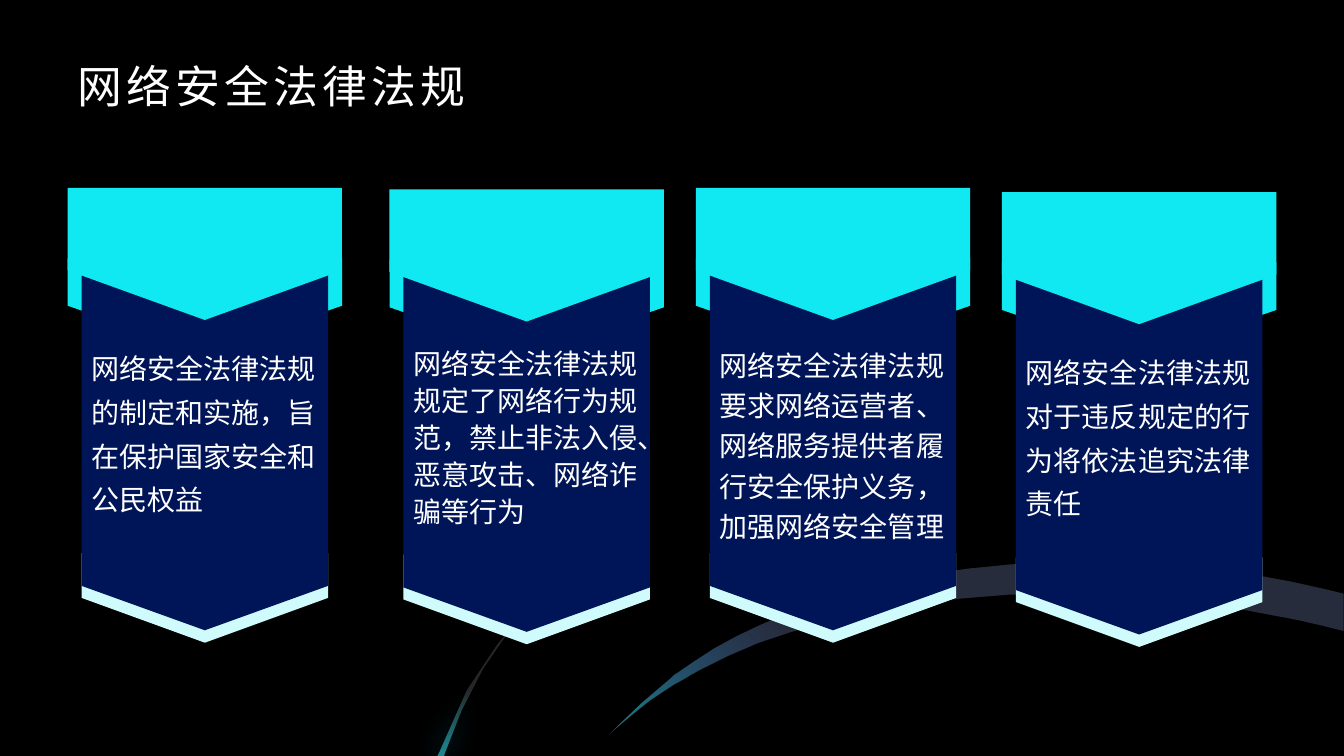
from lxml import etree
from pptx import Presentation
from pptx.dml.color import RGBColor
from pptx.enum import shapes, text
from pptx.oxml import ns
from pptx.util import Pt

CYAN, PALE, NAVY, WHITE = "10E9F2", "CFFBFC", "001558", "FFFFFF"


def paint(sp, *stops, angle=0):
    """Fill with one hex colour, or with two (position, hex, alpha) gradient stops."""
    sp.shadow.inherit = False
    sp.line.fill.background()
    if len(stops) == 1:
        sp.fill.solid()
        sp.fill.fore_color.rgb = RGBColor.from_string(stops[0])
        return
    sp.fill.gradient()
    sp.fill.gradient_angle = angle
    for stop, (position, colour, alpha) in zip(sp.fill.gradient_stops, stops):
        stop.position = position
        stop.color.rgb = RGBColor.from_string(colour)
        clr = stop._gs.find(ns.qn("a:srgbClr"))
        etree.SubElement(clr, ns.qn("a:alpha")).set("val", str(alpha * 1000))


def outline(points):
    """Add a closed shape through points given in points (1/72 inch)."""
    corners = [(Pt(x), Pt(y)) for x, y in points]
    builder = s.shapes.build_freeform(*corners[0], scale=1.0)
    builder.add_line_segments(corners[1:], close=True)
    return builder.convert_to_shape()


prs = Presentation()
prs.slide_width, prs.slide_height = Pt(960), Pt(540)
s = prs.slides.add_slide(prs.slide_layouts[6])
s.background.fill.solid()
s.background.fill.fore_color.rgb = RGBColor.from_string("000000")

# Background curves, in inches
ribbon = [
    (10.77, 5.57), (10.96, 5.57), (11.15, 5.58), (11.34, 5.59), (11.52, 5.6),
    (11.71, 5.62), (11.89, 5.63), (12.08, 5.66), (12.27, 5.68), (12.54, 5.72),
    (12.81, 5.77), (12.99, 5.81), (13.17, 5.85), (13.33, 5.89), (13.33, 6.26),
    (13.13, 6.21), (12.87, 6.15), (12.6, 6.1), (12.34, 6.05), (12.08, 6.01),
    (11.55, 5.94), (11.02, 5.91), (10.5, 5.89), (10, 5.9), (9.52, 5.94),
    (9.06, 5.99), (8.62, 6.07), (8.19, 6.17), (7.85, 6.27), (7.52, 6.38),
    (7.22, 6.51), (6.94, 6.65), (6.69, 6.79), (6.45, 6.95), (6.25, 7.11),
    (6.05, 7.28), (6.36, 6.98), (6.7, 6.69), (6.89, 6.56), (7.09, 6.43),
    (7.31, 6.31), (7.54, 6.2), (7.8, 6.09), (8.06, 5.99), (8.27, 5.92),
    (8.49, 5.86), (8.74, 5.8), (9, 5.74), (9.2, 5.7), (9.4, 5.67),
    (9.61, 5.64), (9.82, 5.62), (10.01, 5.6), (10.2, 5.59), (10.39, 5.58),
    (10.59, 5.57),
]
streak = [
    (5.26, 6.03), (5.03, 6.29), (4.79, 6.64), (4.58, 7.05), (4.41, 7.49),
    (4.41, 7.5), (4.34, 7.5), (4.36, 7.46), (4.63, 6.85), (4.93, 6.4), (5.16, 6.12),
]
curves = [
    (ribbon, [(0, CYAN, 50), (0.31, "3366FF", 10)], 45),
    (streak, [(0.55, CYAN, 0), (1, CYAN, 50)], 270),
]
for curve, stops, angle in curves:
    points = [(x * 72, y * 72) for x, y in curve]
    paint(outline(points), "262626")
    sp = outline(points)
    paint(sp, *stops, angle=angle)

# Glow around the streak
effects = sp._element.spPr.find(ns.qn("a:effectLst"))
glow = etree.SubElement(effects, ns.qn("a:outerShdw"), blurRad=str(Pt(20)), algn="ctr")
etree.SubElement(glow, ns.qn("a:srgbClr"), val="1EB5F7")

# Banners: left, top, line spacing, wording
banners = [
    (58.3, 184.5, 1.3, "网络安全法律法规的制定和实施，旨在保护国家安全和公民权益"),
    (288.2, 185.6, 1.1, "网络安全法律法规规定了网络行为规范，禁止非法入侵、恶意攻击、网络诈骗等行为"),
    (507, 184.5, 1.2, "网络安全法律法规要求网络运营者、网络服务提供者履行安全保护义务，加强网络安全管理"),
    (725.7, 187.5, 1.3, "网络安全法律法规对于违反规定的行为将依法追究法律责任"),
]
BODY_W, CAP_W = 176, 196
texts = [(48, 36, 864, 44.6, 32, "Cabin", 1, "网络安全法律法规")]
for left, top, spacing, wording in banners:
    middle = left + BODY_W / 2
    for offset, width, height, colour in [(0, CAP_W, 67.8, CYAN), (210.6, BODY_W, 64, PALE)]:
        sp = s.shapes.add_shape(
            shapes.MSO_SHAPE.PENTAGON,
            Pt(middle - height / 2), Pt(top + offset + (height - width) / 2),
            Pt(height), Pt(width))
        sp.rotation = 90
        paint(sp, colour)
    for offset, width, side, height, colour in [
            (0, BODY_W, 234, 265.7, NAVY), (-50.3, CAP_W, 59, 94.4, CYAN)]:
        x0, x1, y0 = middle - width / 2, middle + width / 2, top + offset
        paint(outline([(x0, y0), (x1, y0), (x1, y0 + side),
                       (middle, y0 + height), (x0, y0 + side)]), colour)
    texts.append((left, top + 56, BODY_W, 158.4, 20, "Lato", spacing, wording))

for left, top, width, height, size, font, spacing, wording in texts:
    tf = s.shapes.add_textbox(Pt(left), Pt(top), Pt(width), Pt(height)).text_frame
    tf.word_wrap = True
    p = tf.paragraphs[0]
    r = p.add_run()
    r.text = wording
    p.line_spacing = spacing
    p.font.size, p.font.name = Pt(size), font
    p.font.color.rgb = RGBColor.from_string(WHITE)
    if font == "Cabin":
        tf.vertical_anchor = text.MSO_ANCHOR.BOTTOM
        tf.margin_top = tf.margin_bottom = 0
        r.font._element.set("spc", "300")

prs.save("out.pptx")
